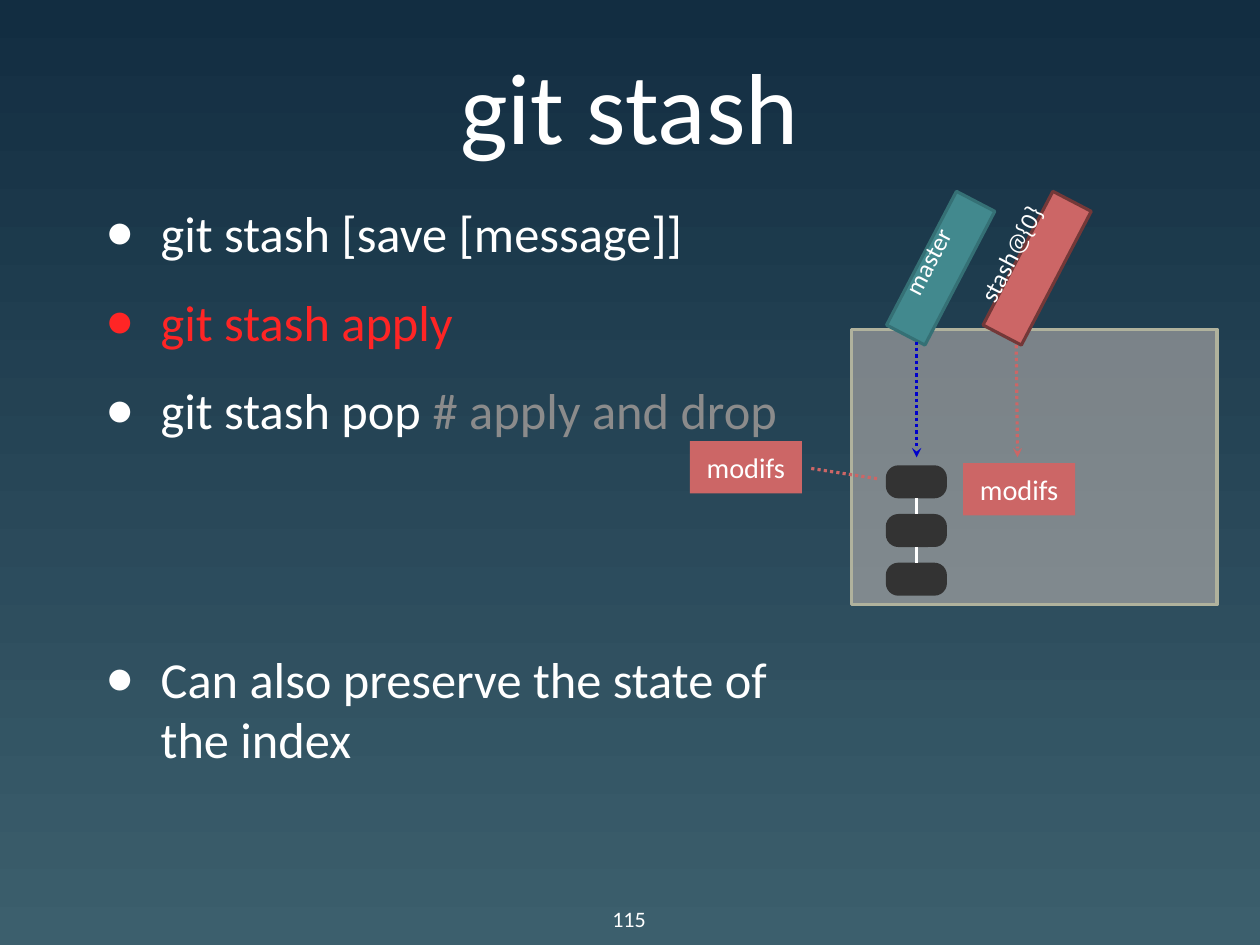
import math
from lxml import etree
from pptx import Presentation
from pptx import util as u
from pptx.dml.color import RGBColor
from pptx.enum import dml, shapes, text
from pptx.oxml.ns import qn

COLORS = {
    "night": "122D41", "slate": "3C5F6D", "white": "FFFFFF", "red": "FF2525",
    "gray": "8B8B8B", "panel": "D4C7C0", "panel_edge": "B0B29D",
    "commit": "333333", "stash": "CC6666", "stash_edge": "733838",
    "master": "42898E", "master_edge": "357075", "pointer": "0000CC",
}
TILT = 297.6
BULLETS = [  # spans of text and colour, space before in points
    ([("git stash [save [message]]", "white")], 0),
    ([("git stash apply", "red")], 18),
    ([("git stash pop ", "white"), ("# apply and drop", "gray")], 18),
    ([("Can also preserve the state of the index", "white")], 132),
]


def rgb(name):
    return RGBColor.from_string(COLORS[name])


def set_all(target, **values):
    for name, value in values.items():
        setattr(target, name, value)


def add_span(para, words, size, color="white"):
    span = para.add_run()
    span.text = words
    set_all(span.font, name="Calibri", size=u.Pt(size))
    span.font.color.rgb = rgb(color)


def prepare_frame(shape, margin=0, **values):
    frame = shape.text_frame
    sides = ("left", "top", "right", "bottom")
    set_all(frame, **{f"margin_{side}": u.Cm(margin) for side in sides})
    set_all(frame, word_wrap=True, **values)
    return frame


def write_centered(shape, words, size):
    frame = prepare_frame(shape, vertical_anchor=text.MSO_ANCHOR.MIDDLE)
    para = frame.paragraphs[0]
    para.alignment = text.PP_ALIGN.CENTER
    add_span(para, words, size)


def add_textbox(page, *box):
    return page.shapes.add_textbox(*map(u.Cm, box))


def add_block(page, box, fill, edge=None, kind=shapes.MSO_SHAPE.RECTANGLE):
    block = page.shapes.add_shape(kind, *map(u.Cm, box))
    block.shadow.inherit = False
    block.fill.solid()
    block.fill.fore_color.rgb = rgb(fill)
    if edge:
        block.line.color.rgb = rgb(edge)
        block.line.width = u.Pt(2)
    else:
        block.line.fill.background()
    return block


def add_line(page, ends, color, dotted=False, arrow=False):
    line = page.shapes.add_connector(shapes.MSO_CONNECTOR.STRAIGHT, *map(u.Cm, ends))
    line.line.color.rgb = rgb(color)
    line.line.width = u.Pt(2)
    if dotted:
        line.line.dash_style = dml.MSO_LINE.ROUND_DOT
    if arrow:
        etree.SubElement(line.line._get_or_add_ln(), qn("a:tailEnd"), type="stealth")
    etree.SubElement(line._element.spPr, qn("a:effectLst"))
    return line


def paint_background(page):
    fill = page.background.fill
    fill.gradient()
    fill.gradient_angle = 270
    for stop, color, position in zip(fill.gradient_stops, ("night", "slate"), (0, 1)):
        stop.color.rgb = rgb(color)
        stop.position = position


def add_bullets(page, *box):
    frame = prepare_frame(add_textbox(page, *box), 0.15)
    for number, (spans, space) in enumerate(BULLETS):
        para = frame.add_paragraph() if number else frame.paragraphs[0]
        para.space_before = u.Pt(space)
        props = para._p.get_or_add_pPr()
        props.set("marL", str(u.Cm(1.93)))
        props.set("indent", str(u.Cm(-1.22)))
        # A large dot near text size stays level with its line
        etree.SubElement(props, qn("a:buSzPct"), val="90000")
        etree.SubElement(props, qn("a:buFont"), typeface="Calibri")
        etree.SubElement(props, qn("a:buChar"), char="●")
        set_all(para.font, name="Calibri", size=u.Pt(32))
        for words, color in spans:
            add_span(para, words, 32, color)


def add_ref_label(page, left, top, words, color, lift):
    """Tilted tag; its words sit `lift` cm above the tag's own axis."""
    width, height = 3.38, 0.97
    add_block(page, (left, top, width, height), color, color + "_edge").rotation = TILT
    angle = math.radians(TILT)
    box = add_textbox(page, left + lift * math.sin(angle),
                      top - lift * math.cos(angle), width, height)
    box.rotation = TILT
    write_centered(box, words, 16)


def add_repository(page, left, top, width, height):
    # Translucent panel
    panel = add_block(page, (left, top, width, height), "panel", "panel_edge")
    color = panel._element.spPr.find(qn("a:solidFill")).find(qn("a:srgbClr"))
    etree.SubElement(color, qn("a:alpha"), val="50000")

    # Commit chain
    commits = []
    for row in range(3):
        commit = add_block(page, (left + 0.76, top + 3.05 + 1.09 * row, 1.37, 0.74),
                           "commit", kind=shapes.MSO_SHAPE.ROUNDED_RECTANGLE)
        commit.adjustments[0] = 0.38
        commits.append(commit)
    for upper, lower in zip(commits, commits[1:]):
        link = add_line(page, (0, 0, 0, 0), "white")
        link.begin_connect(upper, 2)
        link.end_connect(lower, 0)

    # Reference labels and their pointers
    add_ref_label(page, left + 0.3, top - 1.85, "master", "master", 0.34)
    add_ref_label(page, left + 2.46, top - 1.85, "stash@{0}", "stash", 0.68)
    for x1, y1, x2, color in ((1.45, 0.28, 1.45, "pointer"), (3.68, 0.36, 3.71, "stash")):
        add_line(page, (left + x1, top + y1, left + x2, top + 2.87), color, True, True)

    # Stashed and applied changes
    for x, y in ((-3.63, 2.51), (2.49, 3.0)):
        changes = add_block(page, (left + x, top + y, 2.51, 1.17), "stash")
        write_centered(changes, "modifs", 18)
    add_line(page, (left - 0.91, top + 3.12, left + 0.58, top + 3.35), "stash", True)


def main():
    deck = Presentation()
    set_all(deck, slide_width=u.Cm(28.22), slide_height=u.Cm(21.16))
    page = deck.slides.add_slide(deck.slide_layouts[6])
    paint_background(page)
    write_centered(add_textbox(page, 2.74, 0.56, 22.71, 3.53), "git stash", 64)
    add_bullets(page, 1.52, 4.37, 16.69, 13.94)
    add_repository(page, 19.08, 7.37, 8.18, 6.17)
    write_centered(add_textbox(page, 13.09, 20.18, 2, 0.79), "115", 14)
    deck.save("out.pptx")


if __name__ == "__main__":
    main()
